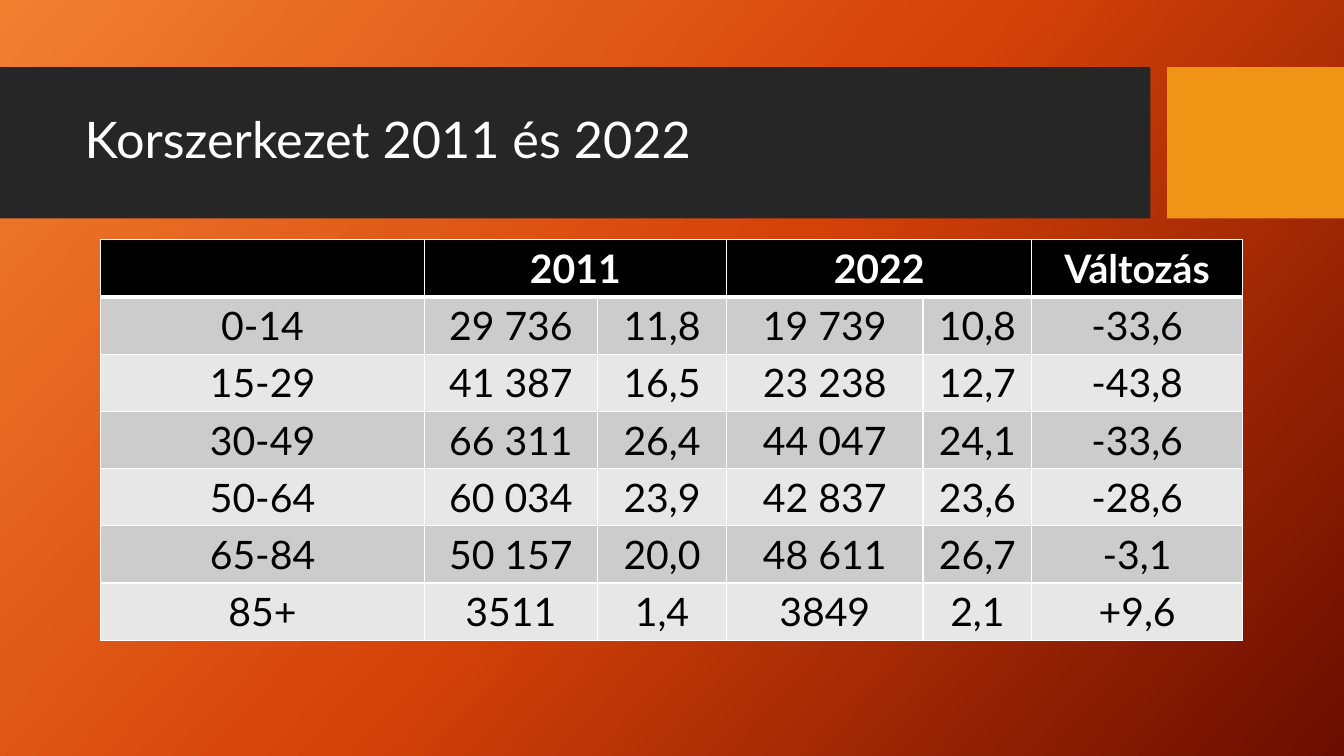
from copy import deepcopy

from lxml.etree import SubElement
from pptx import Presentation
from pptx.dml.color import RGBColor
from pptx.enum.shapes import MSO_SHAPE
from pptx.enum.text import MSO_ANCHOR, MSO_AUTO_SIZE, PP_ALIGN
from pptx.oxml.ns import qn
from pptx.util import Inches, Pt

COLORS = {
    "white": "FFFFFF", "black": "000000", "bar": "262626", "accent": "F09415",
    "odd": "CCCCCC", "even": "E7E7E7",
    "glow": "F18031", "flame": "D54209", "ember": "6A0D00",
}
COLUMN_WEIGHTS = [3.21, 1.72, 1.28, 1.95, 1.08, 2.09]
HEADER = ["", "2011", "", "2022", "", "Változás"]
HEADER_SPANS = [(1, 2), (3, 4)]
AGE_GROUPS = [
    ["0-14", "29 736", "11,8", "19 739", "10,8", "-33,6"],
    ["15-29", "41 387", "16,5", "23 238", "12,7", "-43,8"],
    ["30-49", "66 311", "26,4", "44 047", "24,1", "-33,6"],
    ["50-64", "60 034", "23,9", "42 837", "23,6", "-28,6"],
    ["65-84", "50 157", "20,0", "48 611", "26,7", "-3,1"],
    ["85+", "3511", "1,4", "3849", "2,1", "+9,6"],
]


def rgb(name):
    return RGBColor.from_string(COLORS[name])


def write(frame, text, size=28, color="black", bold=False, align=PP_ALIGN.CENTER, spacing=1.0):
    para = frame.paragraphs[0]
    para.alignment = align
    para.line_spacing = spacing
    span = para.add_run()
    span.text = text
    span.font.name = "Lato"
    span.font.size = Pt(size)
    span.font.bold = bold
    span.font.color.rgb = rgb(color)


class SlideBuilder:
    """Places elements by percentages of the slide's width and height."""

    def __init__(self, deck):
        self.deck = deck
        self.page = deck.slides.add_slide(deck.slide_layouts[5])

    def area(self, left, top, width, height):
        across, down = self.deck.slide_width / 100, self.deck.slide_height / 100
        return [round(n) for n in (left * across, top * down, width * across, height * down)]

    def background(self, colors, angle):
        fill = self.page.background.fill
        fill.gradient()
        fill.gradient_angle = angle
        stop_list = next(self.page.element.iter(qn("a:gsLst")))
        while len(stop_list) < len(colors):
            stop_list.append(deepcopy(stop_list[-1]))
        for index, (stop, color) in enumerate(zip(fill.gradient_stops, colors)):
            stop.position = index / (len(colors) - 1)
            stop.color.rgb = rgb(color)

    def bar(self, *area, color):
        box = self.page.shapes.add_shape(MSO_SHAPE.RECTANGLE, *self.area(*area))
        box.shadow.inherit = False
        box.fill.solid()
        box.fill.fore_color.rgb = rgb(color)
        box.line.fill.background()

    def title(self, text, *area):
        box = self.page.shapes.title
        box.left, box.top, box.width, box.height = self.area(*area)
        frame = box.text_frame
        frame.word_wrap = True
        frame.auto_size = MSO_AUTO_SIZE.NONE
        frame.vertical_anchor = MSO_ANCHOR.MIDDLE
        write(frame, text, size=36, color="white", align=PP_ALIGN.LEFT, spacing=0.9)
        # Bring the title in front of the bars
        box.element.getparent().append(box.element)

    def borders(self, cell, **widths):
        properties = cell._tc.get_or_add_tcPr()
        for index, side in enumerate("LRTB"):
            line = SubElement(properties, qn(f"a:ln{side}"), w=str(Pt(widths.get(side, 1))))
            fill = SubElement(line, qn("a:solidFill"))
            SubElement(fill, qn("a:srgbClr"), val=COLORS["white"])
            properties.insert(index, line)

    def table(self, rows, weights, spans, *area):
        left, top, width, height = self.area(*area)
        table = self.page.shapes.add_table(
            len(rows), len(weights), left, top, width, height).table
        table.horz_banding = False
        for column, weight in zip(table.columns, weights):
            column.width = round(width * weight / sum(weights))
        for row_index, values in enumerate(rows):
            table.rows[row_index].height = height // len(rows)
            header = row_index == 0
            fill = "black" if header else ("even", "odd")[row_index % 2]
            # The header rule is thicker than the other lines
            rule = {0: {"B": 3}, 1: {"T": 3}}.get(row_index, {})
            for column_index, value in enumerate(values):
                cell = table.cell(row_index, column_index)
                cell.fill.solid()
                cell.fill.fore_color.rgb = rgb(fill)
                self.borders(cell, **rule)
                if value:
                    write(cell.text_frame, value, bold=header,
                          color="white" if header else "black")
        for first, last in spans:
            table.cell(0, first).merge(table.cell(0, last))


def main():
    deck = Presentation()
    deck.slide_width, deck.slide_height = Inches(13.33), Inches(7.5)
    slide = SlideBuilder(deck)

    # Backdrop and title band
    slide.background(["glow", "flame", "ember"], angle=360 - 42)
    slide.bar(0, 8.9, 85.6, 20, color="bar")
    slide.bar(86.85, 8.9, 13.15, 20, color="accent")
    slide.title("Korszerkezet 2011 és 2022", 5.55, 10.93, 78.85, 15.73)

    # Age structure
    slide.table([HEADER] + AGE_GROUPS, COLUMN_WEIGHTS, HEADER_SPANS, 7.5, 31.73, 84.95, 52.93)

    deck.save("out.pptx")


if __name__ == "__main__":
    main()
